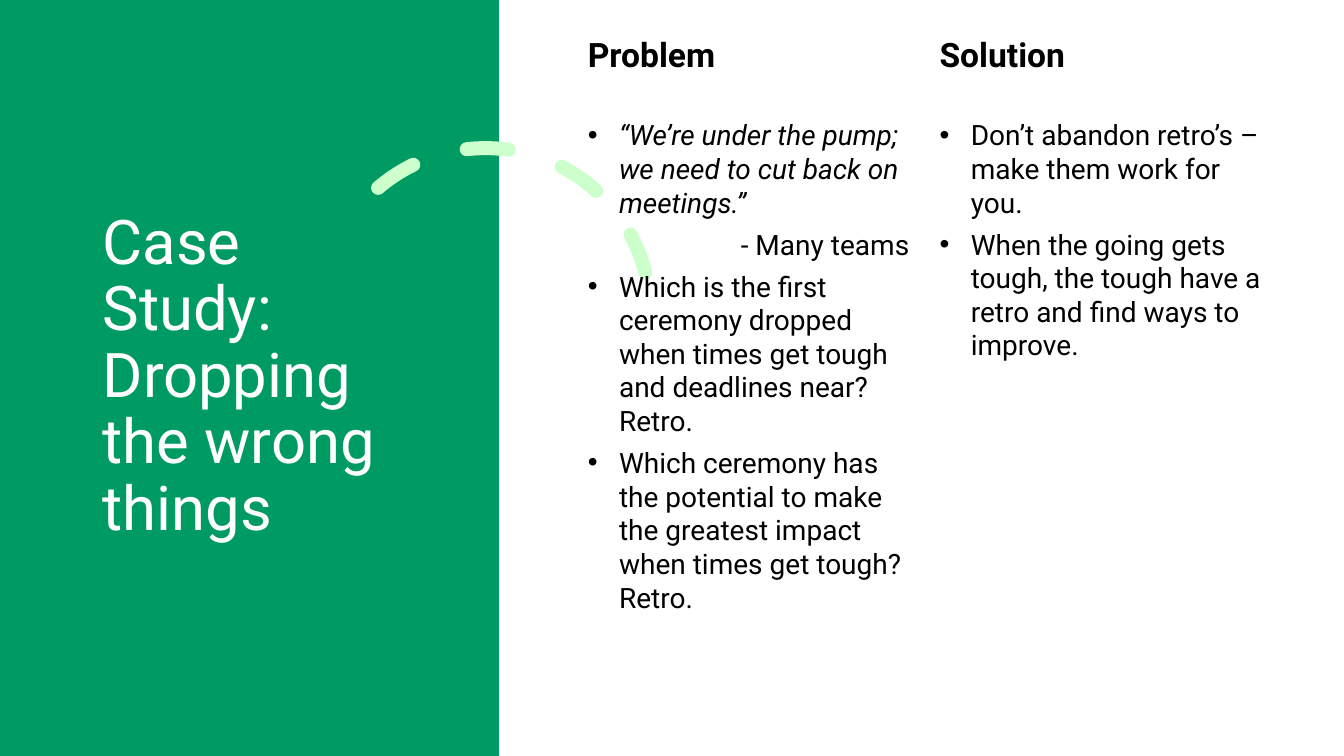
from lxml import etree
from pptx import Presentation
from pptx.dml.color import RGBColor
from pptx.enum.dml import MSO_LINE
from pptx.enum.shapes import MSO_SHAPE
from pptx.enum.text import MSO_ANCHOR, PP_ALIGN
from pptx.oxml.ns import qn
from pptx.util import Inches, Pt

RECTANGLE, ARC = MSO_SHAPE.RECTANGLE, MSO_SHAPE.ARC
TOP, MIDDLE = MSO_ANCHOR.TOP, MSO_ANCHOR.MIDDLE
LEFT, RIGHT = PP_ALIGN.LEFT, PP_ALIGN.RIGHT
DASH = MSO_LINE.DASH

QUOTE, SOURCE, POINT = "quote", "source", "point"

COLUMNS = [
    ("Problem", [
        (QUOTE, "“We’re under the pump; we need to cut back on meetings.”"),
        (SOURCE, "- Many teams"),
        (POINT, "Which is the first ceremony dropped when times get tough "
                "and deadlines near? \vRetro."),
        (POINT, "Which ceremony has the potential to make the greatest impact "
                "when times get tough? \vRetro."),
    ]),
    ("Solution", [
        (POINT, "Don’t abandon retro’s – make them work for you."),
        (POINT, "When the going gets tough, the tough have a retro "
                "and find ways to improve."),
    ]),
]


def color(code):
    return RGBColor.from_string(code)


class CaseStudySlide:
    """Draws styled elements on one slide, placed in percent of its size."""

    font = "Roboto"
    green, mint, white, black = "009B62", "CCFFCC", "FFFFFF", "000000"
    indent = Inches(0.31)

    def __init__(self, deck):
        self.deck = deck
        self.slide = deck.slides.add_slide(deck.slide_layouts[6])

    def place(self, left, top, width, height):
        across, down = self.deck.slide_width / 100, self.deck.slide_height / 100
        return (round(left * across), round(top * down),
                round(width * across), round(height * down))

    def panel(self, *area):
        panel = self.slide.shapes.add_shape(RECTANGLE, *self.place(*area))
        panel.shadow.inherit = False
        panel.fill.solid()
        panel.fill.fore_color.rgb = color(self.green)
        panel.line.fill.background()

    def dashed_arc(self, *area, start, rotation):
        arc = self.slide.shapes.add_shape(ARC, *self.place(*area))
        arc.adjustments[0], arc.adjustments[1] = start, 0
        arc.rotation = rotation
        arc.shadow.inherit = False
        arc.fill.background()
        arc.line.color.rgb = color(self.mint)
        arc.line.width = Pt(10)
        arc.line.dash_style = DASH
        arc.line._ln.set("cap", "rnd")

    def text_frame(self, *area, anchor=TOP):
        frame = self.slide.shapes.add_textbox(*self.place(*area)).text_frame
        frame.word_wrap = True
        frame.vertical_anchor = anchor
        return frame

    def fill_in(self, paragraph, text, size, code, bold=False, italic=False):
        paragraph.text = text
        font = paragraph.font
        font.name, font.size = self.font, Pt(size)
        font.bold, font.italic = bold, italic
        font.color.rgb = color(code)

    def title(self, text, *area):
        paragraph = self.text_frame(*area, anchor=MIDDLE).paragraphs[0]
        paragraph.line_spacing = 0.9
        self.fill_in(paragraph, text, 44, self.white)

    def heading(self, text, *area):
        paragraph = self.text_frame(*area).paragraphs[0]
        paragraph.space_after = Pt(6)
        self.fill_in(paragraph, text, 24, self.black, bold=True)

    def bullet(self, paragraph):
        properties = paragraph._p.get_or_add_pPr()
        properties.set("marL", str(self.indent))
        properties.set("indent", str(-self.indent))
        etree.SubElement(properties, qn("a:buFont")).set("typeface", "Arial")
        etree.SubElement(properties, qn("a:buChar")).set("char", "•")

    def body(self, entries, *area):
        frame = self.text_frame(*area)
        for index, (role, text) in enumerate(entries):
            paragraph = frame.add_paragraph() if index else frame.paragraphs[0]
            paragraph.alignment = RIGHT if role == SOURCE else LEFT
            paragraph.space_after = Pt(6)
            if role != SOURCE:
                self.bullet(paragraph)
            self.fill_in(paragraph, text, 20, self.black, italic=role == QUOTE)


def main():
    deck = Presentation()
    deck.slide_width, deck.slide_height = Inches(13.33), Inches(7.5)
    page = CaseStudySlide(deck)
    page.panel(0, 0, 37.13, 100)
    page.dashed_arc(23.86, 19.6, 24.53, 43.6, start=146.13, rotation=345.8)
    page.title("Case Study: Dropping the wrong things", 6.9, 9.33, 24.23, 81.2)
    for index, (heading, entries) in enumerate(COLUMNS):
        left, width = 43 + 26.17 * index, 25.4
        page.heading(heading, left, 3.87, width, 7.2)
        page.body(entries, left, 14.93, width, 75.6)
    deck.save("out.pptx")


if __name__ == "__main__":
    main()
